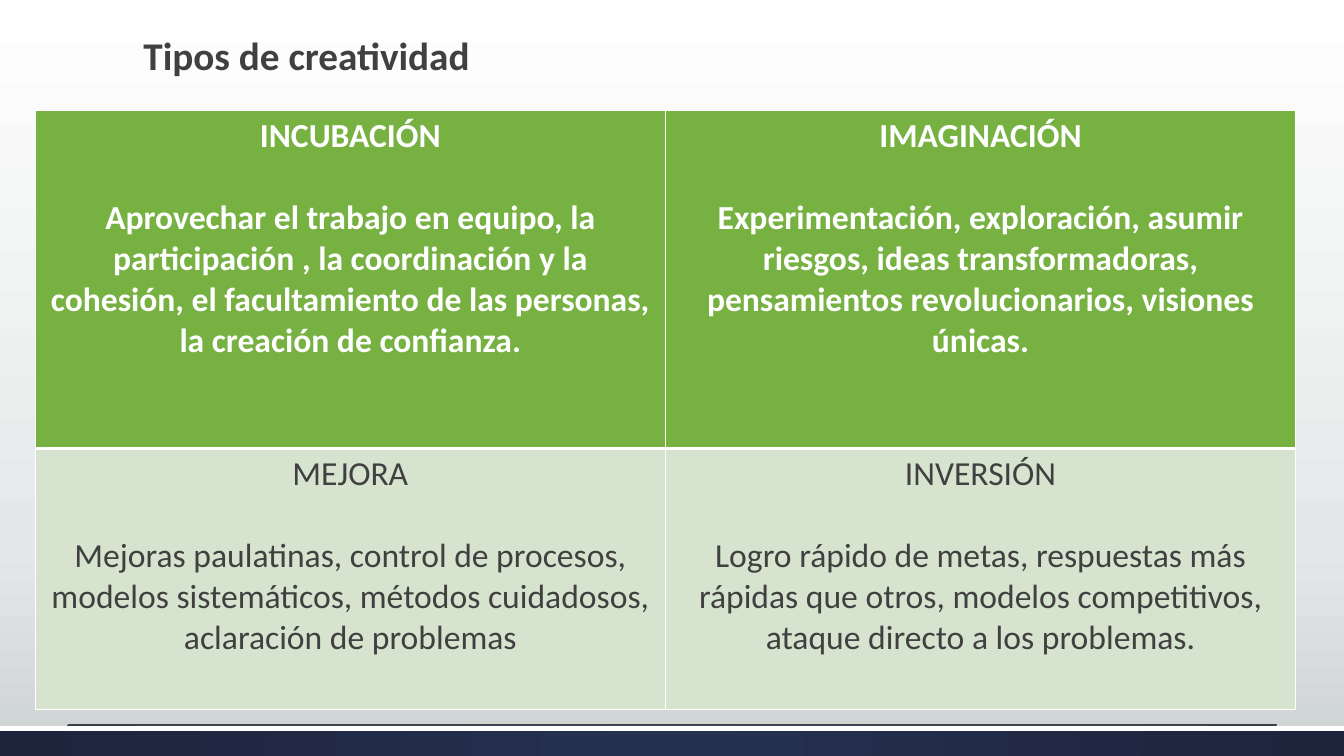
"""Build the slide on types of creativity."""
from lxml.etree import SubElement
from pptx import Presentation
from pptx.dml.color import RGBColor
from pptx.enum.shapes import MSO_CONNECTOR as CONN, MSO_SHAPE as SHAPE
from pptx.enum.text import PP_ALIGN as ALIGN
from pptx.oxml.ns import qn
from pptx.util import Inches, Pt

C = {"white": "FFFFFF", "text": "404040", "green": "77B142", "pale": "D6E4CF",
     "mist": "E5E8E8", "gray": "CDD2D2", "navy": "263050", "night": "1D243C"}
FONT = "Calibri"
CELLS = [
    [("INCUBACIÓN",
      "Aprovechar el trabajo en equipo, la participación , la coordinación y la "
      "cohesión, el facultamiento de las personas, la creación de confianza."),
     ("IMAGINACIÓN",
      "Experimentación, exploración, asumir riesgos, ideas transformadoras, "
      "pensamientos revolucionarios, visiones únicas.")],
    [("MEJORA",
      "Mejoras paulatinas, control de procesos, modelos sistemáticos, métodos "
      "cuidadosos, aclaración de problemas"),
     ("INVERSIÓN",
      "Logro rápido de metas, respuestas más rápidas que otros, modelos "
      "competitivos, ataque directo a los problemas.")],
]
ROWS = [(3.35, "green", "white", True), (2.59, "pale", "text", False)]


def rgb(name):
    return RGBColor.from_string(C[name])


def add_solid(parent, name):
    solid = SubElement(parent, qn("a:solidFill"))
    SubElement(solid, qn("a:srgbClr"), val=C[name])


def set_gradient(fill, element, stops, radial=False):
    fill.gradient()
    grad = element.find(".//" + qn("a:gradFill"))
    for child in list(grad):
        grad.remove(child)
    gs_list = SubElement(grad, qn("a:gsLst"))
    for pos, name in stops:
        gs = SubElement(gs_list, qn("a:gs"), pos=str(pos * 1000))
        SubElement(gs, qn("a:srgbClr"), val=C[name])
    if radial:
        path = SubElement(grad, qn("a:path"), path="circle")
        SubElement(path, qn("a:fillToRect"), {side: "50000" for side in "ltrb"})
    else:
        SubElement(grad, qn("a:lin"), ang="5400000", scaled="0")


def add_bar(s, top, height):
    sp = s.shapes.add_shape(SHAPE.RECTANGLE, 0, Inches(top),
                            Inches(13.33), Inches(height))
    sp.shadow.inherit = False
    sp.line.fill.background()
    return sp


def add_rule(s, x1, x2, y):
    line = s.shapes.add_connector(CONN.STRAIGHT, Inches(x1), Inches(y),
                                  Inches(x2), Inches(y))
    line.line.color.rgb = rgb("text")
    line.line.width = Pt(0.75)
    SubElement(line._element.spPr, qn("a:effectLst"))


def add_run(p, text, size, color, bold):
    p.alignment = ALIGN.CENTER
    r = p.add_run()
    r.text = text
    r.font.name, r.font.size, r.font.bold = FONT, Pt(size), bold
    r.font.color.rgb = rgb(color)


def add_title(s, text):
    tf = s.shapes.add_textbox(Inches(-0.89), Inches(0.26),
                              Inches(7.86), Inches(0.57)).text_frame
    tf.word_wrap = True
    add_run(tf.paragraphs[0], text, 28, "text", True)


def set_borders(cell, widths):
    tc_pr = cell._tc.get_or_add_tcPr()
    for side, width in zip("LRTB", widths):
        ln = SubElement(tc_pr, qn("a:ln" + side), w=str(Pt(width)))
        add_solid(ln, "white")


def fill_cell(cell, heading, body, fill, color, bold):
    cell.fill.solid()
    cell.fill.fore_color.rgb = rgb(fill)
    tf = cell.text_frame
    p = tf.paragraphs[0]
    p.space_after = Pt(29.3)
    add_run(p, heading, 24, color, bold)
    add_run(tf.add_paragraph(), body, 24, color, bold)


def add_types_table(s):
    table = s.shapes.add_table(2, 2, Inches(0.35), Inches(1.1), Inches(12.5),
                               Inches(sum(row[0] for row in ROWS))).table
    table.horz_banding = False
    for i, (height, *style) in enumerate(ROWS):
        table.rows[i].height = Inches(height)
        for j, (heading, body) in enumerate(CELLS[i]):
            cell = table.cell(i, j)
            set_borders(cell, (1, 1, 1, 3) if i == 0 else (1, 1, 3, 1))
            fill_cell(cell, heading, body, *style)


def main():
    prs = Presentation()
    prs.slide_width, prs.slide_height = Inches(13.33), Inches(7.5)
    s = prs.slides.add_slide(prs.slide_layouts[6])
    set_gradient(s.background.fill, s._element,
                 [(0, "white"), (72, "mist"), (100, "gray")])
    footer = add_bar(s, 7.2, 0.3)
    set_gradient(footer.fill, footer._element,
                 [(0, "navy"), (100, "night")], radial=True)
    stripe = add_bar(s, 7.2, 0.05)
    stripe.fill.solid()
    stripe.fill.fore_color.rgb = rgb("white")
    add_rule(s, 0.67, 12.67, 7.19)
    add_types_table(s)
    add_title(s, "Tipos de creatividad")
    prs.save("out.pptx")


if __name__ == "__main__":
    main()
